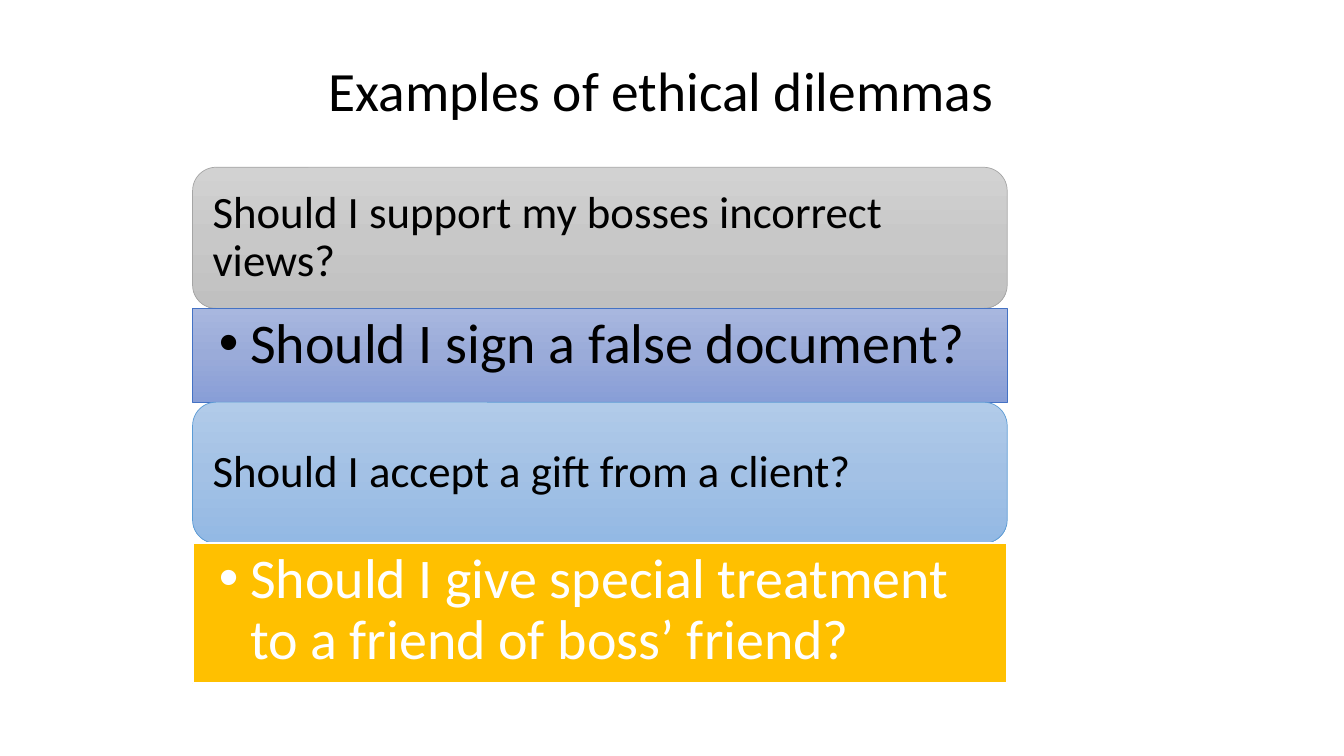
from copy import deepcopy
from dataclasses import dataclass

from lxml.etree import SubElement
from pptx import Presentation
from pptx.dml.color import RGBColor
from pptx.enum.shapes import MSO_SHAPE
from pptx.enum.text import MSO_ANCHOR, PP_ALIGN
from pptx.oxml.ns import qn
from pptx.util import Inches, Pt


@dataclass(frozen=True)
class Theme:
    font: str = "Calibri"
    title_size: float = 39.6
    question_size: float = 32
    bullet_size: float = 40
    black: str = "000000"
    white: str = "FFFFFF"
    gray: tuple = ("D2D2D2", "C8C8C8", "C0C0C0")
    indigo: tuple = ("A8B7DF", "9AABD9", "889ED7")
    blue: tuple = ("B1CBE9", "A3C1E5", "93B9E4")
    gold: tuple = ("FFC000",)
    gray_line: str = "A5A5A5"
    indigo_line: str = "4472C4"
    blue_line: str = "5B9BD5"


THEME = Theme()


@dataclass(frozen=True)
class Band:
    text: str
    height: float
    colors: tuple
    line: str
    line_width: float = 0.5
    text_color: str = THEME.black
    bulleted: bool = False


BANDS = (
    Band("Should I support my bosses incorrect views?", 1.4,
         THEME.gray, THEME.gray_line),
    Band("Should I sign a false document?", 0.93,
         THEME.indigo, THEME.indigo_line, bulleted=True),
    Band("Should I accept a gift from a client?", 1.4,
         THEME.blue, THEME.blue_line),
    Band("Should I give special treatment to a friend of boss’ friend?", 1.39,
         THEME.gold, THEME.white, 1.5, THEME.white, bulleted=True),
)


def write_text(tf, text, size, color, anchor, insets):
    """Fill a frame with one left-aligned paragraph; insets are left, top, right, bottom."""
    tf.word_wrap = True
    tf.vertical_anchor = anchor
    tf.margin_left, tf.margin_top, tf.margin_right, tf.margin_bottom = map(Inches, insets)
    tf.text = text
    p = tf.paragraphs[0]
    p.alignment = PP_ALIGN.LEFT
    p.line_spacing = 0.9
    font = p.runs[0].font
    font.name = THEME.font
    font.size = Pt(size)
    font.color.rgb = RGBColor.from_string(color)
    return p


def add_bullet(p, indent):
    pPr = p._p.get_or_add_pPr()
    pPr.set("marL", str(Inches(indent)))
    pPr.set("indent", str(-Inches(indent)))
    SubElement(pPr, qn("a:buFont")).set("typeface", "Arial")
    SubElement(pPr, qn("a:buChar")).set("char", "•")


def fill_shape(sp, colors):
    """Use a solid fill for one color, or a top-to-bottom gradient for three."""
    if len(colors) == 1:
        sp.fill.solid()
        sp.fill.fore_color.rgb = RGBColor.from_string(colors[0])
        return
    sp.fill.gradient()
    sp.fill.gradient_angle = 270
    first_stop = sp._element.spPr.find(".//" + qn("a:gs"))
    first_stop.addnext(deepcopy(first_stop))
    for i, (stop, color) in enumerate(zip(sp.fill.gradient_stops, colors)):
        stop.position = i / (len(colors) - 1)
        stop.color.rgb = RGBColor.from_string(color)


def add_title(s, left, top, width, height):
    box = s.shapes.add_textbox(*map(Inches, (left, top, width, height)))
    write_text(box.text_frame, "Examples of ethical dilemmas", THEME.title_size,
               THEME.black, MSO_ANCHOR.MIDDLE, (0.1, 0.05, 0.1, 0.05))


def add_band(s, band, left, top, width):
    kind = MSO_SHAPE.RECTANGLE if band.bulleted else MSO_SHAPE.ROUNDED_RECTANGLE
    sp = s.shapes.add_shape(kind, *map(Inches, (left, top, width, band.height)))
    sp.shadow.inherit = False
    fill_shape(sp, band.colors)
    sp.line.color.rgb = RGBColor.from_string(band.line)
    sp.line.width = Pt(band.line_width)
    if band.bulleted:
        p = write_text(sp.text_frame, band.text, THEME.bullet_size, band.text_color,
                       MSO_ANCHOR.TOP, (0.26, 0.07, 0.4, 0.07))
        add_bullet(p, 0.31)
    else:
        write_text(sp.text_frame, band.text, THEME.question_size, band.text_color,
                   MSO_ANCHOR.MIDDLE, (0.13,) * 4)


def add_band_stack(s, left, top, width):
    for band in BANDS:
        add_band(s, band, left, top, width)
        top += band.height


def main():
    prs = Presentation()
    prs.slide_width, prs.slide_height = Inches(13.33), Inches(7.5)
    s = prs.slides.add_slide(prs.slide_layouts[6])
    add_title(s, 3.16, 0.3, 7.08, 1.25)
    add_band_stack(s, 1.91, 1.66, 8.08)
    prs.save("out.pptx")


if __name__ == "__main__":
    main()
